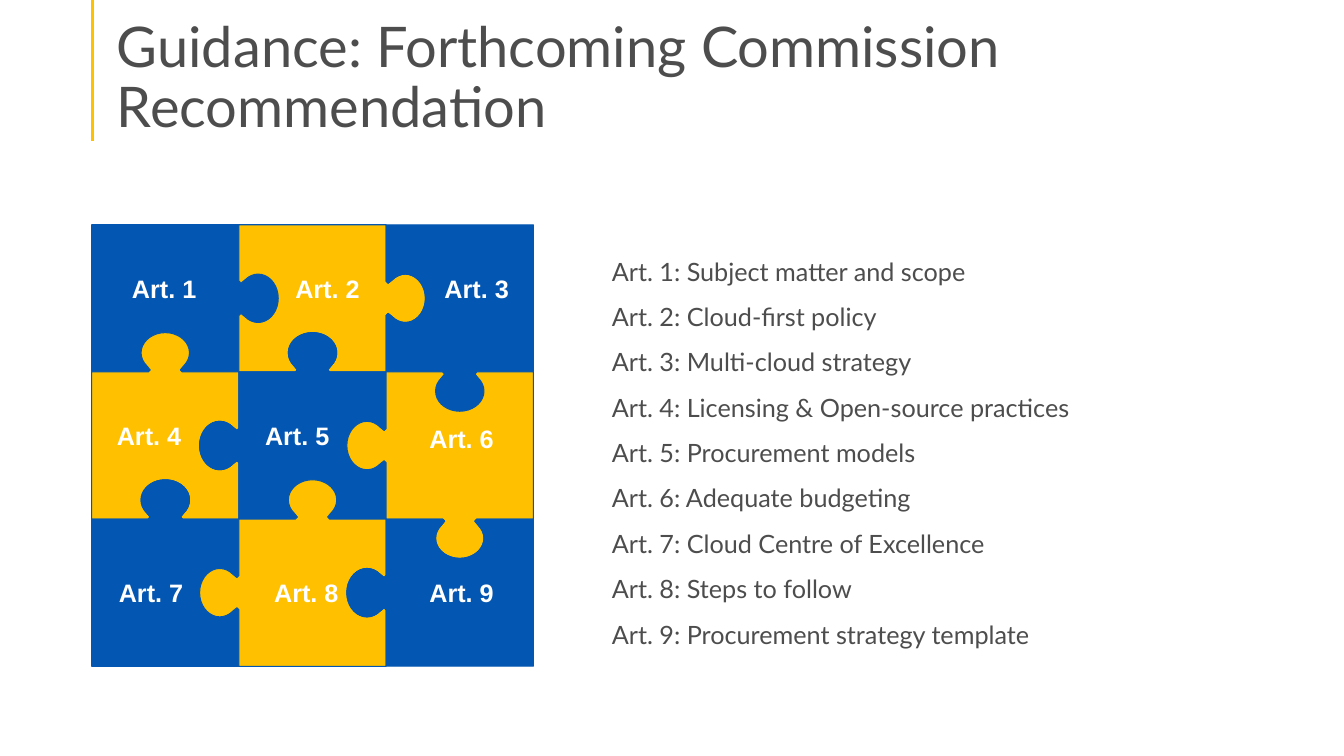
from math import cos, radians, sin

from lxml import etree
from pptx import Presentation
from pptx.dml.color import RGBColor
from pptx.enum.shapes import MSO_CONNECTOR
from pptx.enum.text import MSO_ANCHOR, MSO_AUTO_SIZE, PP_ALIGN
from pptx.oxml.ns import qn
from pptx.util import Inches, Pt

# Content
TITLE = "Guidance: Forthcoming Commission Recommendation"
TOPICS = [
    "Subject matter and scope",
    "Cloud-first policy",
    "Multi-cloud strategy",
    "Licensing & Open-source practices",
    "Procurement models",
    "Adequate budgeting",
    "Cloud Centre of Excellence",
    "Steps to follow",
    "Procurement strategy template",
]
LABELS = [  # left and top of each piece's label
    (1.21, 2.66), (2.83, 2.66), (4.31, 2.66),
    (1.06, 4.12), (2.53, 4.12), (4.16, 4.15),
    (1.08, 5.68), (2.62, 5.68), (4.16, 5.68),
]
# Knob direction at each joint: 1 is right or down, -1 is left or up
ACROSS = [(1, 1), (-1, -1), (-1, -1)]
DOWN = [(-1, -1, 1), (-1, -1, 1)]

# Style
BLUE = RGBColor(0x03, 0x56, 0xB1)
GOLD = RGBColor(0xFF, 0xC0, 0x00)
GREY = RGBColor(0x4D, 0x4D, 0x4D)
WHITE = RGBColor(0xFF, 0xFF, 0xFF)
LEFT, TOP, SIDE, SIZE = 0.91, 2.23, 1.46, 3
HEAD = {"name": "Lato", "size": Pt(40), "bold": False}
BODY = {"name": "Lato", "size": Pt(18)}
LABEL = {"name": "Arial", "size": Pt(18), "bold": True}
STRAIGHT = MSO_CONNECTOR.STRAIGHT
BOTTOM, ALIGN = MSO_ANCHOR.BOTTOM, PP_ALIGN.LEFT
FIXED, GROW = MSO_AUTO_SIZE.NONE, MSO_AUTO_SIZE.SHAPE_TO_FIT_TEXT

# Knob outline as (distance along the side, height above it)
NECK = [(-0.17, 0), (-0.15, 0.02)]
ROUND = [(0.24 * cos(radians(a)), 0.19 + 0.2 * sin(radians(a)))
         for a in range(220, -41, -10)]
KNOB = NECK + ROUND + [(-x, y) for x, y in reversed(NECK)]


def style(para, look, color):
    for key, value in look.items():
        setattr(para.font, key, value)
    para.font.color.rgb = color


def add_text(box, lines, look, color, gap=1.0):
    frame = box.text_frame
    frame.word_wrap = True
    frame.auto_size = GROW
    for i, line in enumerate(lines):
        para = frame.add_paragraph() if i else frame.paragraphs[0]
        para.text = line
        para.line_spacing = gap
        style(para, look, color)


def outline(row, col):
    """Walk the sides of a piece clockwise, with knobs out or in."""
    x, y = LEFT + col * SIDE, TOP + row * SIDE
    last = SIZE - 1
    sides = [
        (1, 0, -DOWN[row - 1][col] if row else 0),
        (0, 1, ACROSS[row][col] if col < last else 0),
        (-1, 0, DOWN[row][col] if row < last else 0),
        (0, -1, -ACROSS[row][col - 1] if col else 0),
    ]
    points = []
    for dx, dy, sign in sides:
        points.append((x, y))
        for step, rise in KNOB if sign else []:
            along, out = SIDE / 2 + step, sign * rise
            points.append((x + dx * along + dy * out,
                           y + dy * along - dx * out))
        x, y = x + dx * SIDE, y + dy * SIDE
    return [(Inches(px), Inches(py)) for px, py in points]


deck = Presentation()
deck.slide_width, deck.slide_height = Inches(13.33), Inches(7.5)
slide = deck.slides.add_slide(deck.slide_layouts[5])
shapes = slide.shapes

# Accent line
rule = shapes.add_connector(
    STRAIGHT, Inches(0.92), 0, Inches(0.92), Inches(1.4))
rule.line.color.rgb = GOLD
rule.line.width = Pt(2.25)
etree.SubElement(rule._element.spPr, qn("a:effectLst"))

# Title
title = shapes.title
title.left, title.top = Inches(1.06), Inches(0.53)
title.width, title.height = Inches(11.5), Inches(0.86)
add_text(title, [TITLE], HEAD, GREY, 0.9)
title.text_frame.auto_size = FIXED
title.text_frame.vertical_anchor = BOTTOM
title.text_frame.margin_bottom = 0
title.text_frame.paragraphs[0].alignment = ALIGN

# Puzzle pieces
for n in range(SIZE * SIZE):
    start, *rest = outline(*divmod(n, SIZE))
    path = shapes.build_freeform(*start)
    path.add_line_segments(rest, close=True)
    piece = path.convert_to_shape()
    piece.shadow.inherit = False
    piece.fill.solid()
    piece.fill.fore_color.rgb = GOLD if n % 2 else BLUE
    piece.line.color.rgb = BLUE
    piece.line.width = Pt(0.75)

# Piece labels
for n, (x, y) in enumerate(LABELS, 1):
    box = shapes.add_textbox(Inches(x), Inches(y), Inches(0.95), Inches(0.4))
    add_text(box, [f"Art. {n}"], LABEL, WHITE)

# Article list
box = shapes.add_textbox(
    Inches(5.97), Inches(2.34), Inches(5.42), Inches(4.13))
lines = [f"Art. {n}: {topic}" for n, topic in enumerate(TOPICS, 1)]
add_text(box, lines, BODY, GREY, 1.5)

deck.save("out.pptx")
